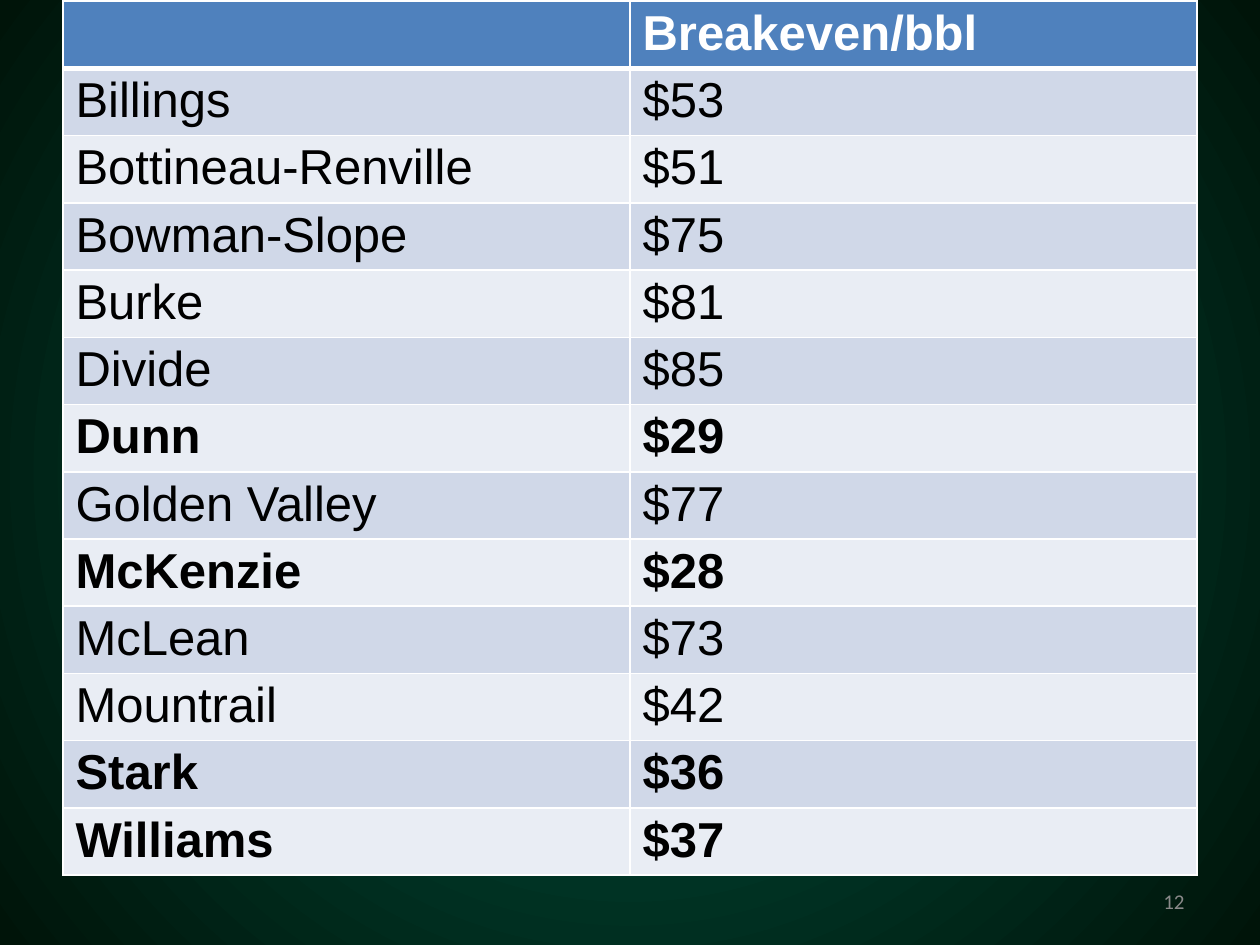
from lxml import etree
from pptx import Presentation
from pptx.dml.color import RGBColor
from pptx.enum.text import MSO_ANCHOR, PP_ALIGN
from pptx.oxml.ns import qn
from pptx.util import Inches, Pt

MIDDLE = MSO_ANCHOR.MIDDLE
RIGHT = PP_ALIGN.RIGHT

HEADER = ("", "Breakeven/bbl")
COUNTIES = [
    ("Billings", "$53"),
    ("Bottineau-Renville", "$51"),
    ("Bowman-Slope", "$75"),
    ("Burke", "$81"),
    ("Divide", "$85"),
    ("Dunn", "$29"),
    ("Golden Valley", "$77"),
    ("McKenzie", "$28"),
    ("McLean", "$73"),
    ("Mountrail", "$42"),
    ("Stark", "$36"),
    ("Williams", "$37"),
]
HIGHLIGHTED = {"Dunn", "McKenzie", "Stark", "Williams"}
PAGE_NUMBER = "12"

THEME = {
    "background": ("005643", "001409"),
    "header": "4F81BD",
    "bands": ("D0D8E8", "E9EDF4"),
    "border": "FFFFFF",
    "header_font": {"name": "Arial", "size": Pt(28), "bold": True, "color": "FFFFFF"},
    "body_font": {"name": "Arial", "size": Pt(28), "bold": False, "color": "000000"},
    "page_font": {"name": "Calibri", "size": Pt(12), "color": "898989"},
}
TABLE_LEFT, TABLE_TOP, TABLE_WIDTH, TABLE_HEIGHT = 0.5, 0.01, 9, 6.94
CELL_MARGINS = {"margin_top": Inches(0.04), "margin_bottom": Inches(0.04)}


def format_font(font, style):
    for attribute, value in style.items():
        if attribute == "color":
            font.color.rgb = RGBColor.from_string(value)
        else:
            setattr(font, attribute, value)


def paint_background(slide):
    fill = slide.background.fill
    fill.gradient()
    for stop, position, color in zip(fill.gradient_stops, (0, 1), THEME["background"]):
        stop.position = position
        stop.color.rgb = RGBColor.from_string(color)
    linear = next(slide.background._cSld.iter(qn("a:lin")))
    radial = etree.Element(qn("a:path"), path="circle")
    center = {side: "50000" for side in "ltrb"}
    etree.SubElement(radial, qn("a:fillToRect"), center)
    linear.getparent().replace(linear, radial)


def draw_borders(cell, widths):
    properties = cell._tc.get_or_add_tcPr()
    for index, side in enumerate("LRTB"):
        line = etree.Element(qn(f"a:ln{side}"), w=str(Pt(widths.get(side, 1))))
        solid = etree.SubElement(line, qn("a:solidFill"))
        etree.SubElement(solid, qn("a:srgbClr"), val=THEME["border"])
        properties.insert(index, line)


def fill_cell(cell, text, color, font_style, border_widths):
    for attribute, value in CELL_MARGINS.items():
        setattr(cell, attribute, value)
    cell.fill.solid()
    cell.fill.fore_color.rgb = RGBColor.from_string(color)
    draw_borders(cell, border_widths)
    cell.text = text
    format_font(cell.text_frame.paragraphs[0].font, font_style)


def add_breakeven_table(slide):
    rows = [HEADER, *COUNTIES]
    bounds = map(Inches, (TABLE_LEFT, TABLE_TOP, TABLE_WIDTH, TABLE_HEIGHT))
    table = slide.shapes.add_table(len(rows), len(HEADER), *bounds).table
    for row_index, values in enumerate(rows):
        table.rows[row_index].height = Inches(TABLE_HEIGHT / len(rows))
        if row_index == 0:
            color, font_style = THEME["header"], THEME["header_font"]
        else:
            color = THEME["bands"][(row_index - 1) % 2]
            font_style = {**THEME["body_font"], "bold": values[0] in HIGHLIGHTED}
        border_widths = {0: {"B": 3}, 1: {"T": 3}}.get(row_index, {})
        for column_index, text in enumerate(values):
            cell = table.cell(row_index, column_index)
            fill_cell(cell, text, color, font_style, border_widths)


def add_page_number(slide):
    bounds = map(Inches, (7.17, 6.95, 2.33, 0.4))
    frame = slide.shapes.add_textbox(*bounds).text_frame
    frame.word_wrap = True
    frame.vertical_anchor = MIDDLE
    frame.text = PAGE_NUMBER
    paragraph = frame.paragraphs[0]
    paragraph.alignment = RIGHT
    format_font(paragraph.font, THEME["page_font"])


def main():
    deck = Presentation()
    deck.slide_width, deck.slide_height = Inches(10), Inches(7.5)
    slide = deck.slides.add_slide(deck.slide_layouts[6])
    paint_background(slide)
    add_breakeven_table(slide)
    add_page_number(slide)
    deck.save("out.pptx")


if __name__ == "__main__":
    main()
